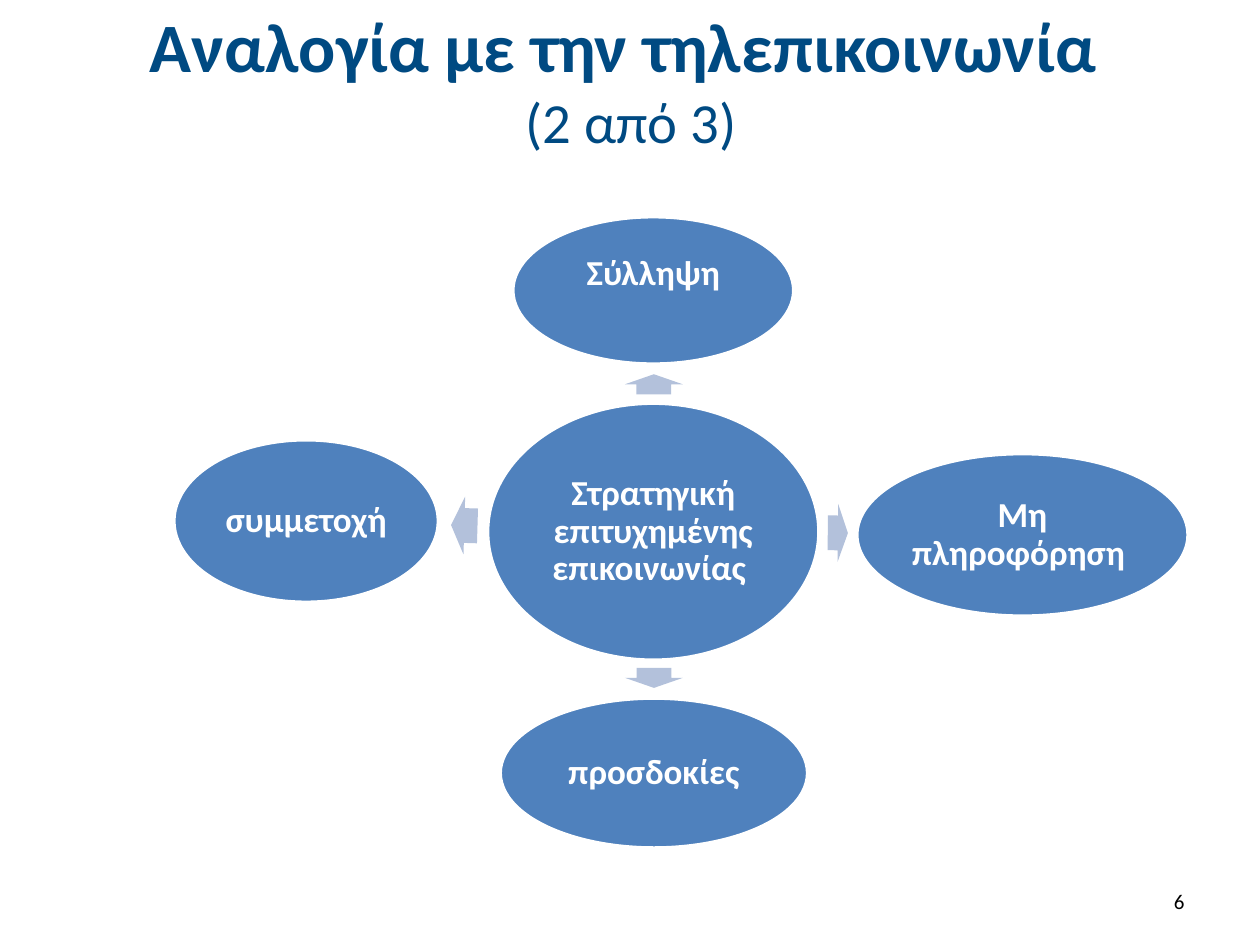
"""Build the slide on the strategy of successful communication."""
from pptx import Presentation
from pptx.dml.color import RGBColor
from pptx.enum.shapes import MSO_SHAPE
from pptx.enum.text import MSO_ANCHOR, PP_ALIGN
from pptx.util import Inches, Pt

NAVY = RGBColor(0x00, 0x4A, 0x82)
BLUE = RGBColor(0x4F, 0x81, 0xBD)
PALE = RGBColor(0xB3, 0xC1, 0xDB)
WHITE = RGBColor(0xFF, 0xFF, 0xFF)
BLACK = RGBColor(0x00, 0x00, 0x00)


def add_text(p, text, size=20, color=WHITE, bold=False, align=PP_ALIGN.CENTER):
    p.alignment = align
    r = p.add_run()
    r.text = text
    r.font.name = "Calibri"
    r.font.size = Pt(size)
    r.font.bold = bold
    r.font.color.rgb = color


prs = Presentation()
prs.slide_width, prs.slide_height = Inches(10), Inches(7.5)
s = prs.slides.add_slide(prs.slide_layouts[6])

tf = s.shapes.add_textbox(Inches(0.51), Inches(0.13), Inches(9), Inches(0.99)).text_frame
tf.word_wrap = True
tf.vertical_anchor = MSO_ANCHOR.MIDDLE
p = tf.paragraphs[0]
add_text(p, "Αναλογία με την τηλεπικοινωνία ", size=39.6, color=NAVY, bold=True)
p.add_line_break()
add_text(p, "(2 από 3)", size=32.4, color=NAVY)

tf = s.shapes.add_textbox(Inches(7.17), Inches(6.95), Inches(2.33), Inches(0.4)).text_frame
tf.word_wrap = True
tf.vertical_anchor = MSO_ANCHOR.MIDDLE
add_text(tf.paragraphs[0], "6", size=12, color=BLACK, align=PP_ALIGN.RIGHT)

ellipses = [
    ("Στρατηγική επιτυχημένης επικοινωνίας ", 3.87, 3.2, 2.63, 2.04, 0.03),
    ("Σύλληψη", 4.07, 1.72, 2.23, 1.17, 0.28),
    ("Μη πληροφόρηση ", 6.8, 3.6, 2.63, 1.29, 0.03),
    ("προσδοκίες", 3.97, 5.54, 2.44, 1.19, 0.03),
    ("συμμετοχή", 1.38, 3.49, 2.1, 1.29, 0.03),
]
for text, x, y, w, h, bottom in ellipses:
    sp = s.shapes.add_shape(MSO_SHAPE.OVAL, Inches(x), Inches(y), Inches(w), Inches(h))
    sp.shadow.inherit = False
    sp.fill.solid()
    sp.fill.fore_color.rgb = BLUE
    sp.line.color.rgb = WHITE
    sp.line.width = Pt(2)
    tf = sp.text_frame
    tf.word_wrap = True
    tf.vertical_anchor = MSO_ANCHOR.MIDDLE
    tf.margin_left = tf.margin_right = tf.margin_top = Inches(0.03)
    tf.margin_bottom = Inches(bottom)
    p = tf.paragraphs[0]
    p.line_spacing = 0.9
    add_text(p, text, bold=True)

arrows = [
    (5.11, 2.82, 0.16, 270),
    (6.57, 4, 0.16, 0.6),
    (5.11, 5.15, 0.16, 90),
    (3.58, 3.94, 0.21, 181.7),
]
for x, y, w, angle in arrows:
    sp = s.shapes.add_shape(MSO_SHAPE.RIGHT_ARROW, Inches(x), Inches(y), Inches(w), Inches(0.46))
    sp.shadow.inherit = False
    sp.rotation = angle
    sp.adjustments[0], sp.adjustments[1] = 0.6, 0.5
    sp.fill.solid()
    sp.fill.fore_color.rgb = PALE
    sp.line.fill.background()

prs.save("out.pptx")
